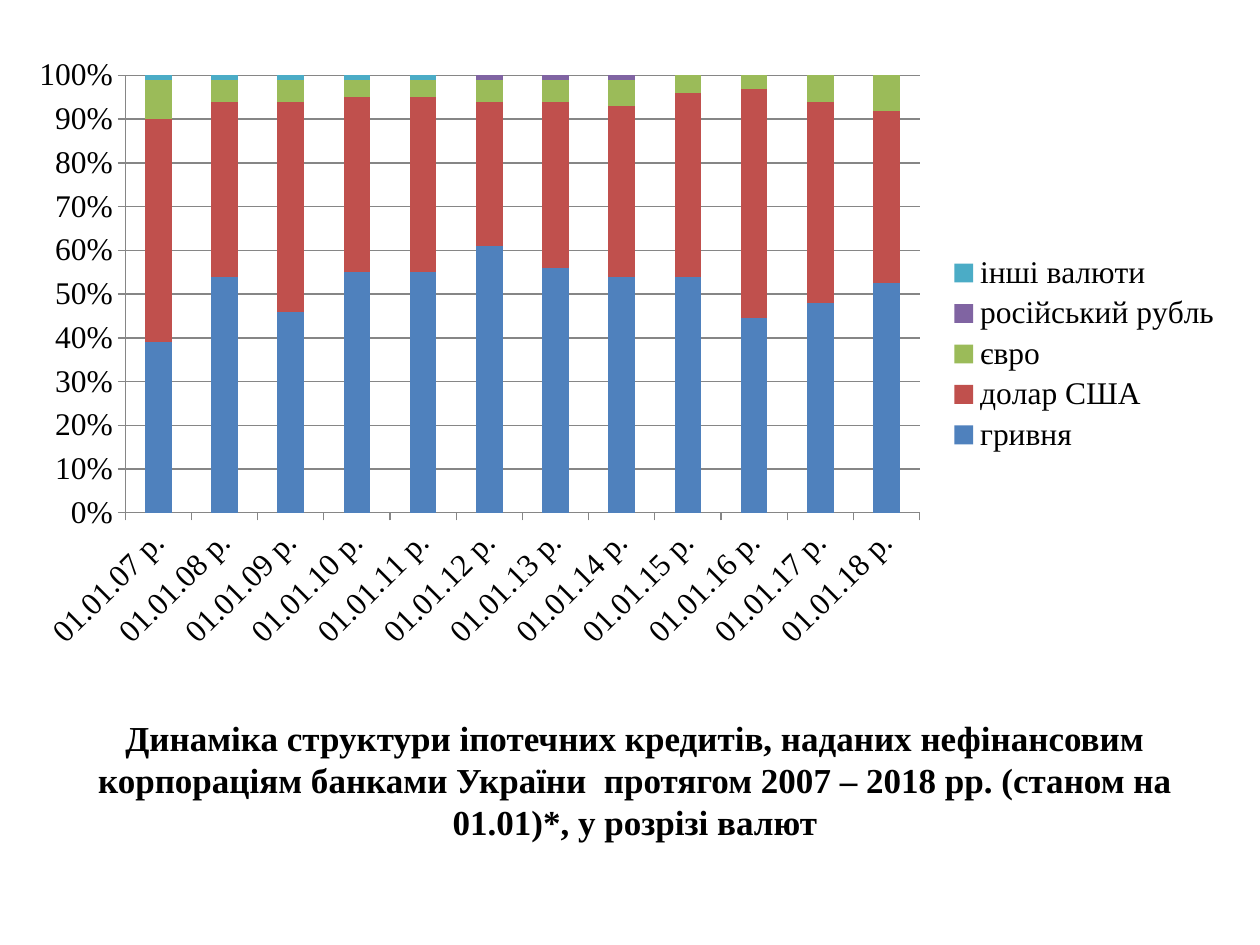
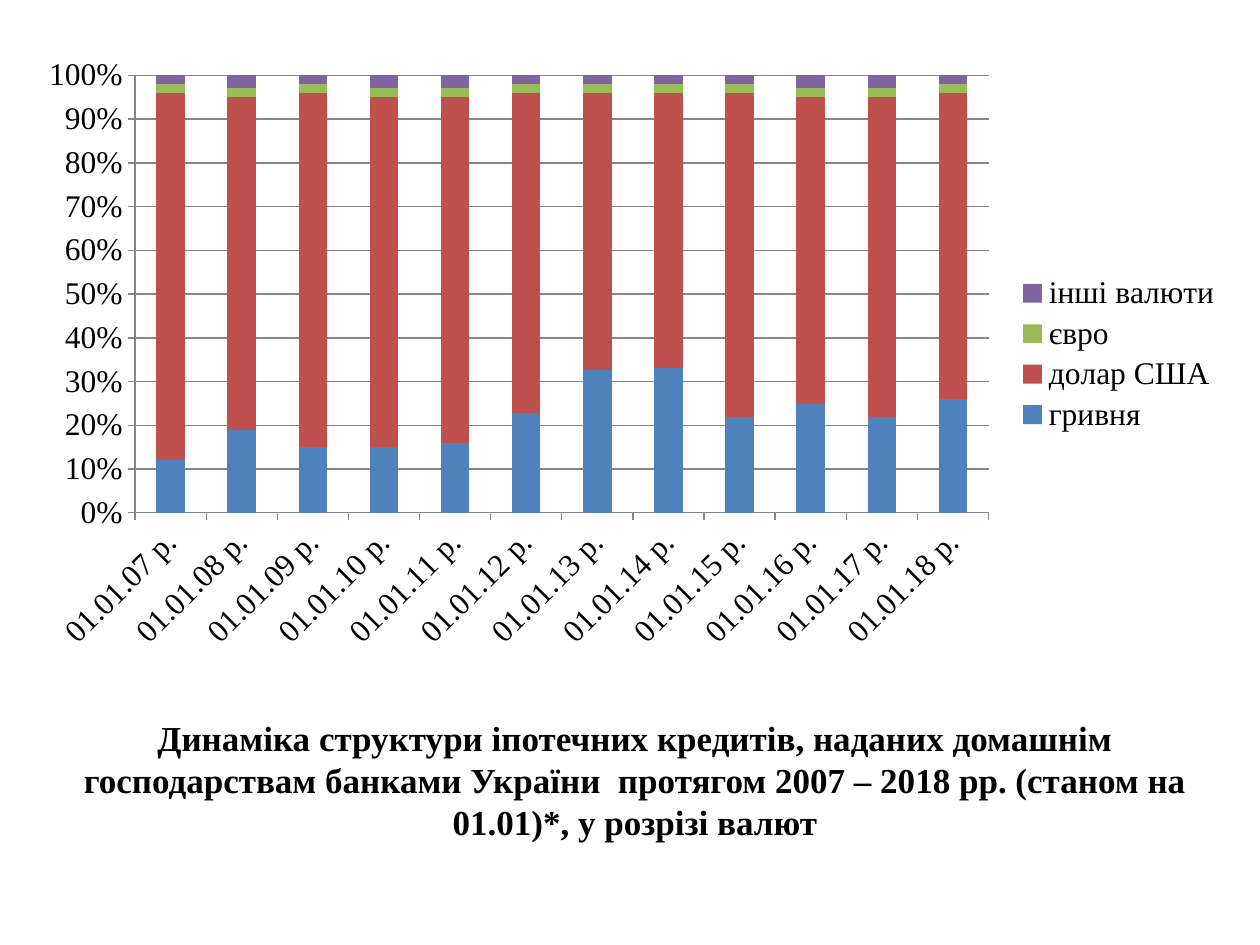
from pptx import Presentation
from pptx.chart.data import CategoryChartData
from pptx.dml.color import RGBColor
from pptx.enum import chart as charts, text
from pptx.util import Emu, Pt

PX = 914400 / 126
FONT = "Times New Roman"
COLOURS = {
    "ink": "000000",
    "axis": "868686",
    "blue": "4F81BD",
    "red": "C0504D",
    "green": "9BBB59",
    "violet": "8064A2",
    "teal": "4BACC6",
}
SERIES_COLOURS = ("blue", "red", "green", "violet", "teal")
DATES = [f"01.01.{year:02d} р." for year in range(7, 19)]
CAPTION = (
    "Динаміка структури іпотечних кредитів, наданих {} банками України  "
    "протягом 2007 – 2018 рр. (станом на 01.01)*, у розрізі валют"
)
CORPORATE_LOANS = {
    "гривня": (39, 54, 46, 55, 55, 61, 56, 54, 54, 44, 48, 52),
    "долар США": (51, 40, 48, 40, 40, 33, 38, 39, 42, 52, 46, 39),
    "євро": (9, 5, 5, 4, 4, 5, 5, 6, 4, 3, 6, 8),
    "російський рубль": (0, 0, 0, 0, 0, 1, 1, 1, 0, 0, 0, 0),
    "інші валюти": (1, 1, 1, 1, 1, 0, 0, 0, 0, 0, 0, 0),
}
HOUSEHOLD_LOANS = {
    "гривня": (12, 19, 15, 15, 16, 23, 33, 33, 22, 25, 22, 26),
    "долар США": (83, 76, 81, 80, 79, 74, 64, 63, 74, 71, 73, 70),
    "євро": (2,) * 12,
    "інші валюти": (2, 3, 2, 3, 3, 2, 2, 2, 2, 3, 3, 2),
}


def px(*lengths):
    return [Emu(round(length * PX)) for length in lengths]


class Deck:
    def __init__(self):
        self.presentation = Presentation()
        self.presentation.slide_width, self.presentation.slide_height = px(1260, 945)
        self.slide = None

    def add_slide(self):
        self.slide = self.presentation.slides.add_slide(self.presentation.slide_layouts[6])

    def colour(self, name):
        return RGBColor.from_string(COLOURS[name])

    def style_font(self, font, size, bold=False):
        font.name = FONT
        font.size = Pt(size)
        font.bold = bold
        font.color.rgb = self.colour("ink")

    def caption(self, borrowers):
        frame = self.slide.shapes.add_textbox(*px(55, 710, 1160, 140)).text_frame
        frame.word_wrap = True
        frame.auto_size = text.MSO_AUTO_SIZE.SHAPE_TO_FIT_TEXT
        frame.text = CAPTION.format(borrowers)
        paragraph = frame.paragraphs[0]
        paragraph.alignment = text.PP_ALIGN.CENTER
        self.style_font(paragraph.runs[0].font, 20, bold=True)

    def style_axis(self, axis):
        axis.major_tick_mark = charts.XL_TICK_MARK.OUTSIDE
        axis.minor_tick_mark = charts.XL_TICK_MARK.NONE
        axis.format.line.color.rgb = self.colour("axis")
        self.style_font(axis.tick_labels.font, 18)

    def currency_chart(self, left, width, loans):
        data = CategoryChartData(number_format="General")
        data.categories = DATES
        for currency, shares in loans.items():
            data.add_series(currency, shares)
        chart = self.slide.shapes.add_chart(
            charts.XL_CHART_TYPE.COLUMN_STACKED_100, *px(left, 46, width, 616), data
        ).chart
        self.style_font(chart.font, 18)
        chart.has_title = False
        chart.has_legend = True
        chart.legend.position = charts.XL_LEGEND_POSITION.RIGHT
        chart.legend.include_in_layout = False
        self.style_font(chart.legend.font, 18)

        plot = chart.plots[0]
        plot.gap_width = 150
        plot.overlap = 100
        plot.vary_by_categories = False
        for series, name in zip(plot.series, SERIES_COLOURS):
            series.format.fill.solid()
            series.format.fill.fore_color.rgb = self.colour(name)

        dates, shares = chart.category_axis, chart.value_axis
        self.style_axis(dates)
        self.style_axis(shares)
        shares.has_major_gridlines = True
        shares.major_gridlines.format.line.color.rgb = self.colour("axis")
        shares.tick_labels.number_format = "0%"
        shares.tick_labels.number_format_is_linked = False


def main():
    deck = Deck()

    deck.add_slide()
    deck.caption("нефінансовим корпораціям")
    deck.currency_chart(15, 1220, CORPORATE_LOANS)

    deck.add_slide()
    deck.currency_chart(25, 1210, HOUSEHOLD_LOANS)
    deck.caption("домашнім господарствам")

    deck.presentation.save("out.pptx")


if __name__ == "__main__":
    main()
